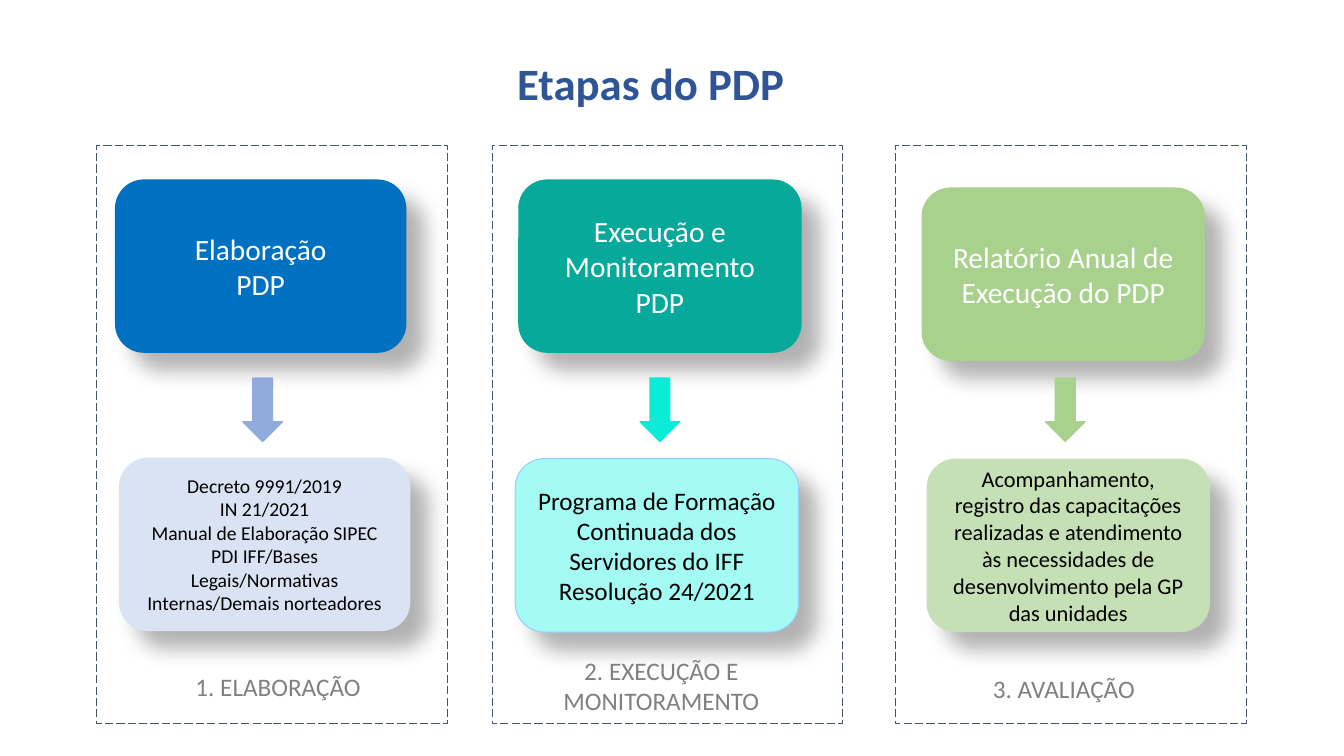
from lxml import etree
from pptx import Presentation
from pptx.dml.color import RGBColor
from pptx.enum.dml import MSO_LINE
from pptx.enum.shapes import MSO_SHAPE
from pptx.enum.text import MSO_ANCHOR, PP_ALIGN
from pptx.oxml.ns import qn
from pptx.util import Inches, Pt

RECTANGLE = MSO_SHAPE.RECTANGLE
ROUNDED = MSO_SHAPE.ROUNDED_RECTANGLE
DOWN_ARROW = MSO_SHAPE.DOWN_ARROW
LONG_DASH = MSO_LINE.LONG_DASH
TOP, MIDDLE, BOTTOM = MSO_ANCHOR.TOP, MSO_ANCHOR.MIDDLE, MSO_ANCHOR.BOTTOM
LEFT, CENTER = PP_ALIGN.LEFT, PP_ALIGN.CENTER

COLORS = {
    "title": "2F5597", "frame": "44546A", "label": "808080",
    "white": "FFFFFF", "black": "000000",
    "blue": "0070C0", "blue_arrow": "8FAADC", "blue_light": "DAE3F3",
    "teal": "07A99A", "teal_arrow": "0AECD6", "teal_light": "A3FBF3", "sky": "99CCFF",
    "green": "A9D18E", "green_light": "C5E0B4",
}
COLUMNS, ROWS = 133.3, 75
FRAME_TOP, FRAME_WIDTH, FRAME_HEIGHT = 14.4, 34.8, 57.4
CARD_HEIGHT = 17.2
ARROW_TOP, ARROW_WIDTH, ARROW_HEIGHT = 37.5, 3.9, 6.3

STAGES = [
    {
        "frame": 9.6, "card_width": 28.9,
        "step": (11.4, 17.8, "blue", ["Elaboração", "PDP"]),
        "arrow": (24.1, "blue_arrow"),
        "detail": (11.8, 45.4, "blue_light", None, 14, [
            "Decreto 9991/2019", "IN 21/2021", "Manual de Elaboração SIPEC",
            "PDI IFF/Bases Legais/Normativas Internas/Demais norteadores"]),
        "label": (18.4, 65.6, 19.3, LEFT, "1. ELABORAÇÃO"),
    },
    {
        "frame": 48.8, "card_width": 28.1,
        "step": (51.4, 17.8, "teal", ["Execução e Monitoramento", "PDP"]),
        "arrow": (63.5, "teal_arrow"),
        "detail": (51.1, 45.5, "teal_light", "sky", 18, [
            "Programa de Formação Continuada dos Servidores do IFF",
            "Resolução 24/2021"]),
        "label": (53.8, 64, 23.6, CENTER, "2. EXECUÇÃO E MONITORAMENTO"),
    },
    {
        "frame": 88.8, "card_width": 28.1,
        "step": (91.4, 18.6, "green", ["Relatório Anual de Execução do PDP"]),
        "arrow": (103.7, "green"),
        "detail": (91.9, 45.5, "green_light", None, 16, [
            "Acompanhamento, registro das capacitações realizadas e atendimento "
            "às necessidades de desenvolvimento pela GP das unidades"]),
        "label": (97.5, 65.8, 19.3, LEFT, "3. AVALIAÇÃO"),
    },
]


class SlideBuilder:
    font_name = "Calibri"

    def __init__(self, presentation):
        self.slide = presentation.slides.add_slide(presentation.slide_layouts[6])
        self.column = presentation.slide_width / COLUMNS
        self.row = presentation.slide_height / ROWS

    def place(self, left, top, width, height):
        return (round(left * self.column), round(top * self.row),
                round(width * self.column), round(height * self.row))

    def color(self, name):
        return RGBColor.from_string(COLORS[name])

    def fill_text(self, shape, lines, size, color, anchor=MIDDLE, align=CENTER,
                  bold=False, vertical_margin=0.05):
        frame = shape.text_frame
        frame_format = {
            "word_wrap": True, "vertical_anchor": anchor,
            "margin_left": Inches(0.1), "margin_right": Inches(0.1),
            "margin_top": Inches(vertical_margin), "margin_bottom": Inches(vertical_margin),
        }
        for name, value in frame_format.items():
            setattr(frame, name, value)
        font_format = {"name": self.font_name, "size": Pt(size), "bold": bold}
        for index, line in enumerate(lines):
            paragraph = frame.add_paragraph() if index else frame.paragraphs[0]
            paragraph.alignment = align
            run = paragraph.add_run()
            run.text = line
            for name, value in font_format.items():
                setattr(run.font, name, value)
            run.font.color.rgb = self.color(color)

    def text(self, box, lines, size, color, **text_format):
        shape = self.slide.shapes.add_textbox(*self.place(*box))
        self.fill_text(shape, lines, size, color, **text_format)

    def shape(self, kind, box, fill=None, line=None, line_width=0.75, dash=None):
        shape = self.slide.shapes.add_shape(kind, *self.place(*box))
        shape.shadow.inherit = False
        if fill:
            shape.fill.solid()
            shape.fill.fore_color.rgb = self.color(fill)
        else:
            shape.fill.background()
        if line:
            shape.line.color.rgb = self.color(line)
            for name, value in {"width": Pt(line_width), "dash_style": dash}.items():
                setattr(shape.line, name, value)
        else:
            shape.line.fill.background()
        return shape

    def card(self, box, fill, lines, size, color, line=None):
        shape = self.shape(ROUNDED, box, fill, line)
        shape.adjustments[0] = 0.167
        effects = shape._element.spPr.find(qn("a:effectLst"))
        shadow = etree.SubElement(effects, qn("a:outerShdw"), {
            "blurRad": str(Pt(15)), "dist": str(Pt(18)), "dir": str(45 * 60000),
            "algn": "tl", "rotWithShape": "0"})
        shade = etree.SubElement(shadow, qn("a:srgbClr"), val=COLORS["black"])
        etree.SubElement(shade, qn("a:alpha"), val="30000")
        self.fill_text(shape, lines, size, color)

    def stage(self, stage):
        width = stage["card_width"]
        self.shape(RECTANGLE, (stage["frame"], FRAME_TOP, FRAME_WIDTH, FRAME_HEIGHT),
                   line="frame", dash=LONG_DASH)
        left, top, fill, lines = stage["step"]
        self.card((left, top, width, CARD_HEIGHT), fill, lines, 21, "white")
        left, top, fill, line, size, lines = stage["detail"]
        self.card((left, top, width, CARD_HEIGHT), fill, lines, size, "black", line)
        left, top, label_width, align, label = stage["label"]
        self.text((left, top, label_width, 2.7), [label], 18, "label",
                  anchor=TOP, align=align, vertical_margin=0.1)
        left, fill = stage["arrow"]
        self.shape(DOWN_ARROW, (left, ARROW_TOP, ARROW_WIDTH, ARROW_HEIGHT), fill, fill, 1)


def main():
    presentation = Presentation()
    presentation.slide_width = Inches(13.33)
    presentation.slide_height = Inches(7.5)
    builder = SlideBuilder(presentation)
    builder.text((4.7, 3, 120.7, 8.4), ["Etapas do PDP "], 32, "title",
                 anchor=BOTTOM, bold=True)
    for stage in STAGES:
        builder.stage(stage)
    presentation.save("out.pptx")


if __name__ == "__main__":
    main()
